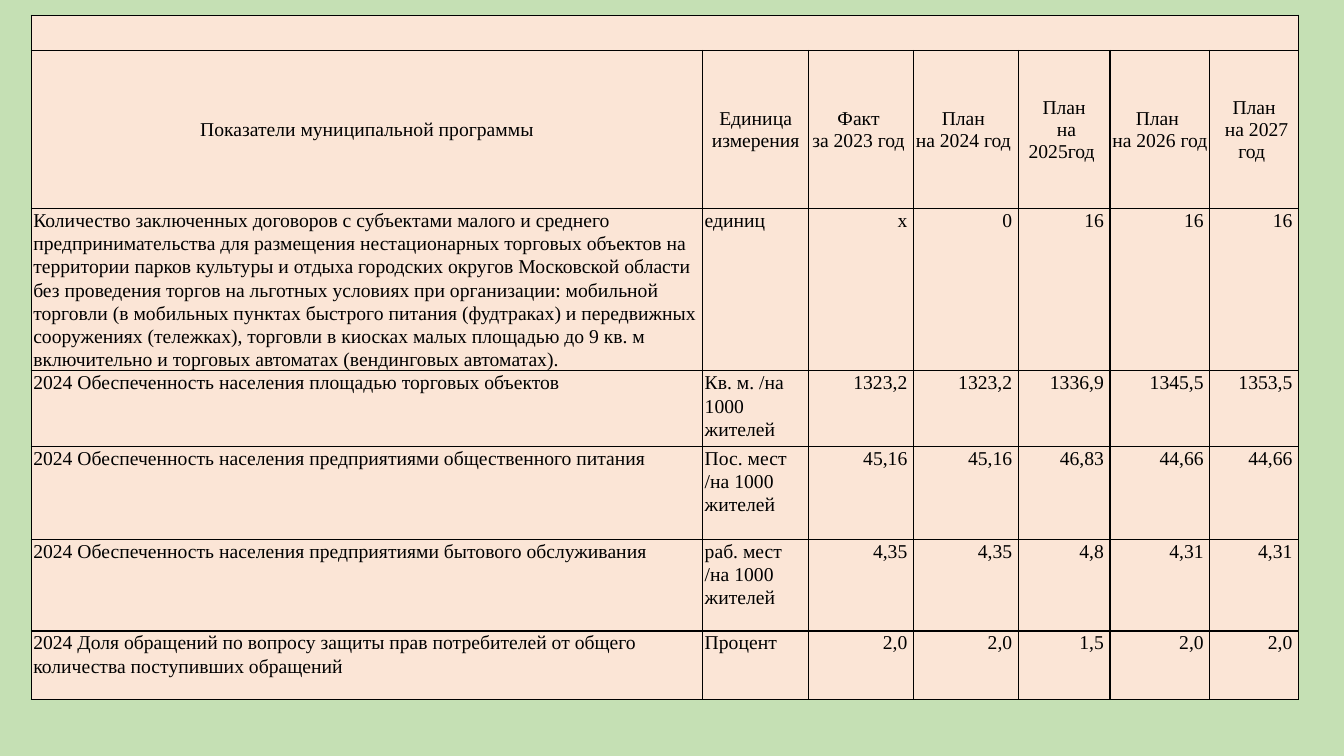
from dataclasses import dataclass

from lxml import etree
from pptx import Presentation
from pptx.dml.color import RGBColor
from pptx.enum.text import MSO_ANCHOR, PP_ALIGN
from pptx.oxml.ns import qn
from pptx.table import Table, _Cell
from pptx.util import Inches, Pt

LEFT, CENTER, RIGHT = PP_ALIGN.LEFT, PP_ALIGN.CENTER, PP_ALIGN.RIGHT
TOP, MIDDLE = MSO_ANCHOR.TOP, MSO_ANCHOR.MIDDLE
BLANK_LAYOUT = 6


@dataclass(frozen=True)
class Theme:
    background: str = "C5E0B4"
    cell: str = "FBE5D6"
    ink: str = "000000"
    font: str = "Times New Roman"
    size: float = 14
    border: float = 1


@dataclass(frozen=True)
class CellStyle:
    align: PP_ALIGN
    anchor: MSO_ANCHOR = TOP
    inset: float = 0
    left_indent: float = 0
    right_indent: float = 0
    line_spacing: float = 1.07


@dataclass(frozen=True)
class Indicator:
    name: str
    unit: str
    values: tuple[str, ...]
    height: float


THEME = Theme()
HEADER = CellStyle(CENTER, MIDDLE, inset=0.01, line_spacing=1)
LABEL = CellStyle(LEFT, left_indent=0.02)
VALUE = CellStyle(RIGHT, right_indent=0.06)

TABLE_LEFT, TABLE_TOP = 0.31, 0.15
COLUMN_WIDTHS = (6.66, 1.05, 1.04, 1.04, 0.91, 0.99, 0.88)
BANNER_HEIGHT, HEADER_HEIGHT = 0.35, 1.57
HEADINGS = (
    ("Показатели муниципальной программы",),
    ("Единица измерения",),
    ("Факт ", "за 2023 год "),
    ("План ", "на 2024 год "),
    ("План", " на 2025год "),
    ("План ", "на 2026 год "),
    ("План", " на 2027 год "),
)
INDICATORS = (
    Indicator(
        "Количество заключенных договоров с субъектами малого и среднего "
        "предпринимательства для размещения нестационарных торговых объектов на "
        "территории парков культуры и отдыха городских округов Московской области "
        "без проведения торгов на льготных условиях при организации: мобильной "
        "торговли (в мобильных пунктах быстрого питания (фудтраках) и передвижных "
        "сооружениях (тележках), торговли в киосках малых площадью до 9 кв. м "
        "включительно и торговых автоматах (вендинговых автоматах).",
        "единиц", ("x", "0", "16", "16", "16"), 1.61),
    Indicator("2024 Обеспеченность населения площадью торговых объектов ",
              "Кв. м. /на 1000 жителей",
              ("1323,2", "1323,2", "1336,9", "1345,5", "1353,5"), 0.75),
    Indicator("2024 Обеспеченность населения предприятиями общественного питания",
              "Пос. мест /на 1000 жителей",
              ("45,16", "45,16", "46,83", "44,66", "44,66"), 0.92),
    Indicator("2024 Обеспеченность населения предприятиями бытового обслуживания",
              "раб. мест /на 1000 жителей",
              ("4,35", "4,35", "4,8", "4,31", "4,31"), 0.91),
    Indicator("2024 Доля обращений по вопросу защиты прав потребителей от общего "
              "количества поступивших обращений",
              "Процент", ("2,0", "2,0", "1,5", "2,0", "2,0"), 0.68),
)


def format_cell(cell: _Cell) -> None:
    """Give the cell its four borders and its fill."""
    properties = cell._tc.get_or_add_tcPr()
    for side in ("a:lnL", "a:lnR", "a:lnT", "a:lnB"):
        line = etree.SubElement(properties, qn(side), w=str(Pt(THEME.border)))
        fill = etree.SubElement(line, qn("a:solidFill"))
        etree.SubElement(fill, qn("a:srgbClr"), val=THEME.ink)
    cell.fill.solid()
    cell.fill.fore_color.rgb = RGBColor.from_string(THEME.cell)
    cell.margin_left = cell.margin_right = cell.margin_top = cell.margin_bottom = 0


def write_cell(cell: _Cell, lines: tuple[str, ...], style: CellStyle) -> None:
    cell.vertical_anchor = style.anchor
    cell.margin_left = cell.margin_right = cell.margin_top = Inches(style.inset)
    frame = cell.text_frame
    for index, line in enumerate(lines):
        paragraph = frame.add_paragraph() if index else frame.paragraphs[0]
        paragraph.alignment = style.align
        paragraph.line_spacing = style.line_spacing
        indents = paragraph._p.get_or_add_pPr()
        indents.set("marL", str(Inches(style.left_indent)))
        indents.set("marR", str(Inches(style.right_indent)))
        run = paragraph.add_run()
        run.text = line
        run.font.name = THEME.font
        run.font.size = Pt(THEME.size)
        run.font.color.rgb = RGBColor.from_string(THEME.ink)


def fill_table(table: Table) -> None:
    for row in table.rows:
        for cell in row.cells:
            format_cell(cell)
    table.cell(0, 0).merge(table.cell(0, len(COLUMN_WIDTHS) - 1))
    for column, heading in enumerate(HEADINGS):
        write_cell(table.cell(1, column), heading, HEADER)
    for row, indicator in enumerate(INDICATORS, start=2):
        write_cell(table.cell(row, 0), (indicator.name,), LABEL)
        write_cell(table.cell(row, 1), (indicator.unit,), LABEL)
        for column, value in enumerate(indicator.values, start=2):
            write_cell(table.cell(row, column), (value,), VALUE)


def main() -> None:
    presentation = Presentation()
    presentation.slide_width = Inches(13.33)
    presentation.slide_height = Inches(7.5)
    slide = presentation.slides.add_slide(presentation.slide_layouts[BLANK_LAYOUT])
    slide.background.fill.solid()
    slide.background.fill.fore_color.rgb = RGBColor.from_string(THEME.background)

    heights = (BANNER_HEIGHT, HEADER_HEIGHT, *(item.height for item in INDICATORS))
    table = slide.shapes.add_table(
        len(heights), len(COLUMN_WIDTHS), Inches(TABLE_LEFT), Inches(TABLE_TOP),
        Inches(sum(COLUMN_WIDTHS)), Inches(sum(heights))).table
    for column, width in zip(table.columns, COLUMN_WIDTHS):
        column.width = Inches(width)
    for row, height in zip(table.rows, heights):
        row.height = Inches(height)
    fill_table(table)
    presentation.save("out.pptx")


if __name__ == "__main__":
    main()
